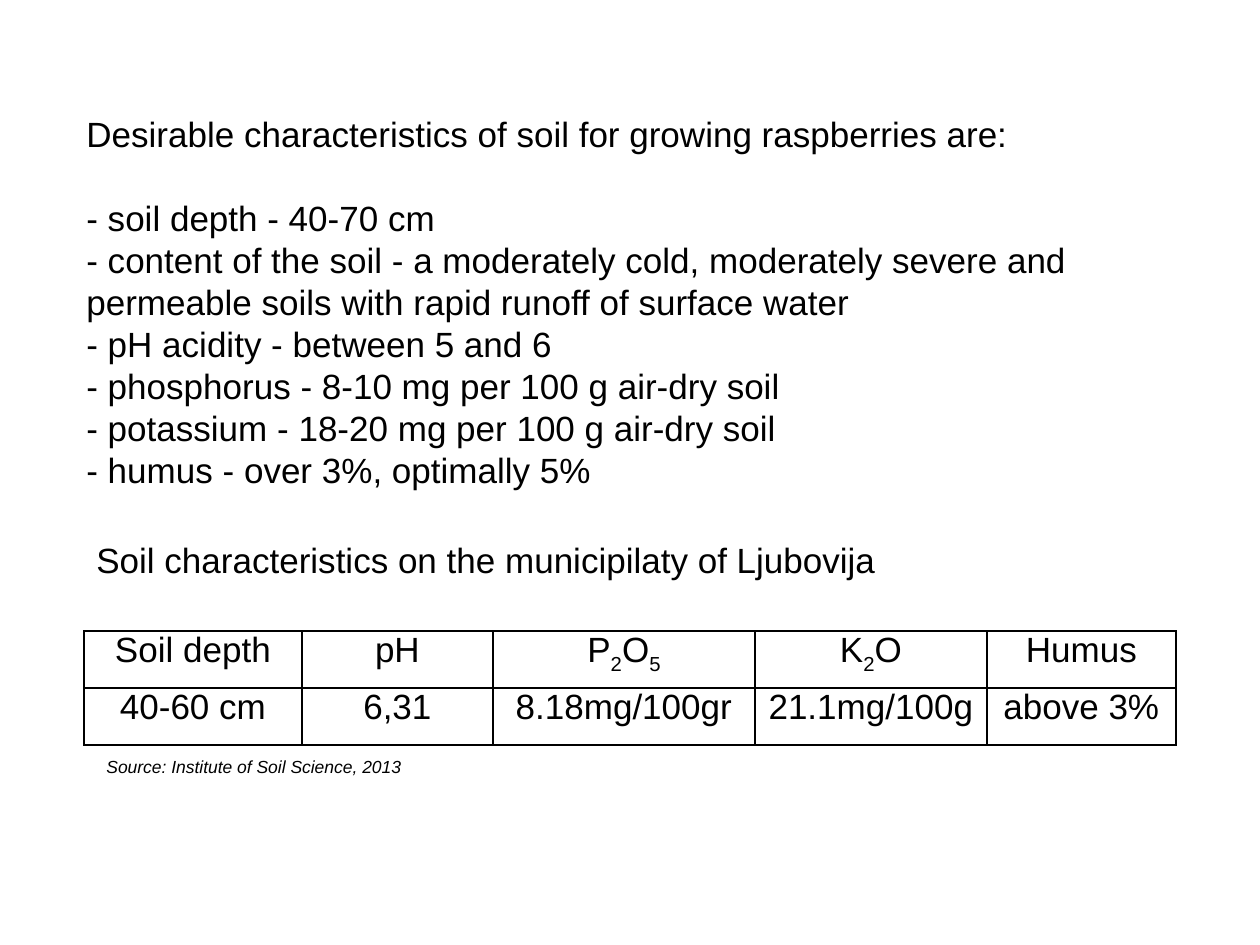
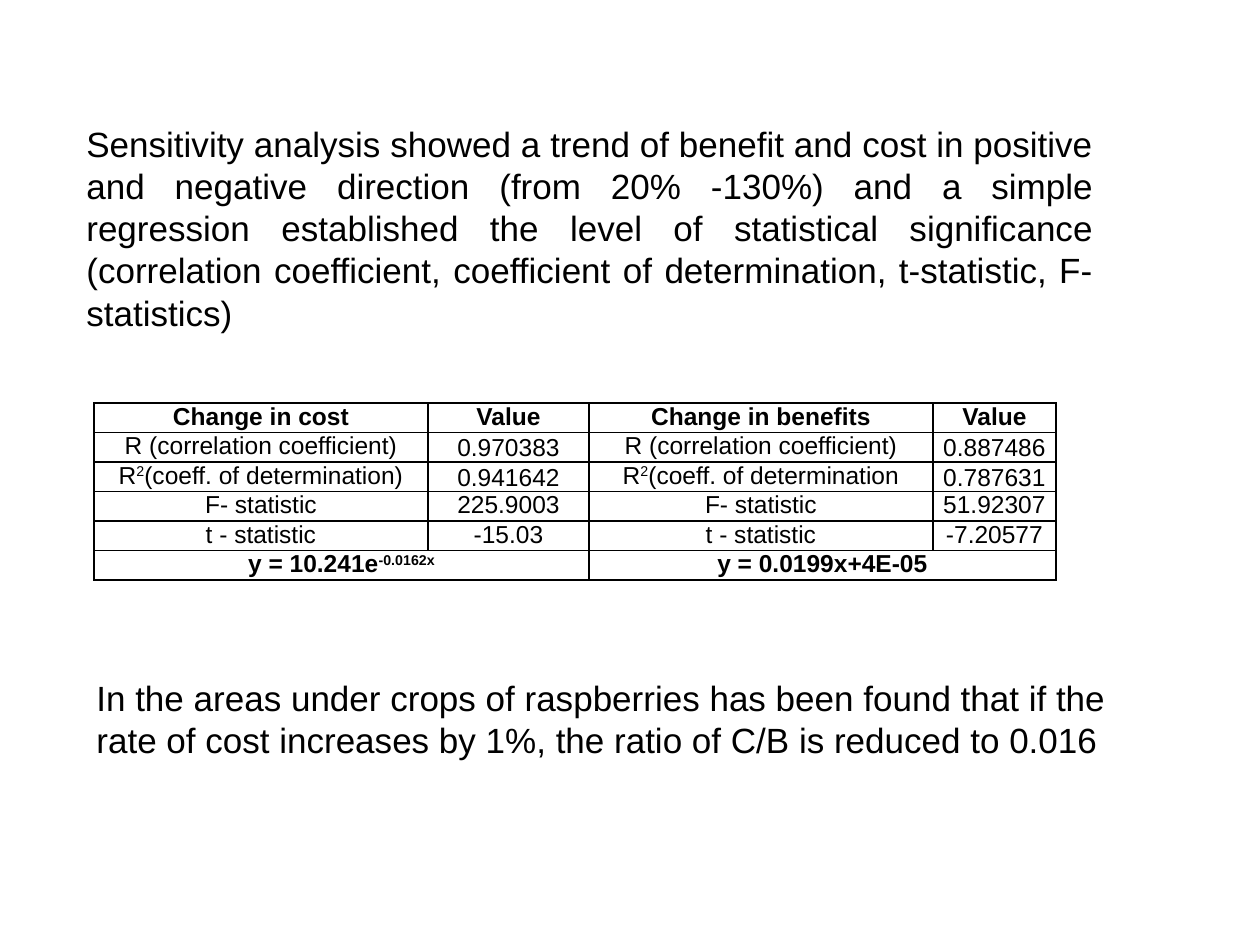
from dataclasses import dataclass

from lxml.etree import SubElement
from pptx import Presentation
from pptx.dml.color import RGBColor
from pptx.enum.text import MSO_ANCHOR, PP_ALIGN
from pptx.oxml.ns import qn
from pptx.slide import Slide
from pptx.util import Emu, Pt

# Shared look and scale
EMU_PER_PX = 914400 / 126
BLACK = RGBColor(0, 0, 0)
FONT = "Arial"
BODY_SIZE = 20
CELL_MARGIN = 9
BASELINE_MARK = "|"  # every second part of a cell text is raised or lowered


def px(n: int) -> Emu:
    return Emu(round(n * EMU_PER_PX))


@dataclass
class TextBlock:
    left: int
    top: int
    width: int
    height: int
    paragraphs: list[str]
    align: PP_ALIGN = PP_ALIGN.LEFT
    anchor: MSO_ANCHOR = MSO_ANCHOR.TOP
    size: int = BODY_SIZE
    italic: bool = False
    gap: int = 0


@dataclass
class Grid:
    left: int
    top: int
    columns: list[int]
    row_height: int
    rows: list[list[str]]
    size: int
    baseline: int
    bold_rows: tuple[int, ...] = ()
    low_cells: tuple[tuple[int, int], ...] = ()
    merges: tuple[tuple[int, int], ...] = ()


def style(p, size: int, align: PP_ALIGN, bold: bool = False, italic: bool = False) -> None:
    p.alignment = align
    p.font.name, p.font.size = FONT, Pt(size)
    p.font.bold, p.font.italic = bold, italic
    p.font.color.rgb = BLACK


def draw_text(s: Slide, block: TextBlock) -> None:
    box = s.shapes.add_textbox(px(block.left), px(block.top), px(block.width), px(block.height))
    tf = box.text_frame
    tf.word_wrap = True
    tf.vertical_anchor = block.anchor
    for i, text in enumerate(block.paragraphs):
        p = tf.paragraphs[0] if i == 0 else tf.add_paragraph()
        p.text = text
        style(p, block.size, block.align, italic=block.italic)
        if i > 0:
            p.space_before = Pt(block.gap)


def draw_borders(cell) -> None:
    tc_pr = cell._tc.get_or_add_tcPr()
    for side in ("lnL", "lnR", "lnT", "lnB"):
        ln = SubElement(tc_pr, qn(f"a:{side}"), w=str(Pt(1)))
        fill = SubElement(ln, qn("a:solidFill"))
        SubElement(fill, qn("a:srgbClr"), val=str(BLACK))


def draw_grid(s: Slide, grid: Grid) -> None:
    frame = s.shapes.add_table(
        len(grid.rows), len(grid.columns), px(grid.left), px(grid.top),
        px(sum(grid.columns)), px(grid.row_height * len(grid.rows)))
    table = frame.table
    table.first_row = table.horz_banding = False
    for column, width in zip(table.columns, grid.columns):
        column.width = px(width)
    for row in table.rows:
        row.height = px(grid.row_height)

    for i, texts in enumerate(grid.rows):
        for j, text in enumerate(texts):
            cell = table.cell(i, j)
            cell.margin_left = cell.margin_right = px(CELL_MARGIN)
            cell.margin_top = cell.margin_bottom = 0
            if (i, j) in grid.low_cells:
                cell.vertical_anchor = MSO_ANCHOR.BOTTOM
            draw_borders(cell)
            cell.fill.background()
            p = cell.text_frame.paragraphs[0]
            style(p, grid.size, PP_ALIGN.CENTER, bold=i in grid.bold_rows)
            for k, part in enumerate(text.split(BASELINE_MARK) if text else []):
                r = p.add_run()
                r.text = part
                if k % 2:
                    r._r.get_or_add_rPr().set("baseline", str(grid.baseline * 1000))

    # Each merge spans a cell and its right neighbour
    for i, j in grid.merges:
        table.cell(i, j).merge(table.cell(i, j + 1))


# Slide 1: soil characteristics
SOIL_NEEDS = [
    "- soil depth - 40-70 cm",
    "- content of the soil - a moderately cold, moderately severe and "
    "permeable soils with rapid runoff of surface water",
    "- pH acidity - between 5 and 6",
    "- phosphorus - 8-10 mg per 100 g air-dry soil",
    "- potassium - 18-20 mg per 100 g air-dry soil",
    "- humus - over 3%, optimally 5%",
]
SOIL = [
    Grid(84, 631, [218, 191, 262, 232, 189], 57, [
        ["Soil depth", "pH", "P|2|O|5", "K|2|O", "Humus"],
        ["40-60 cm", "6,31", "8.18mg/100gr", "21.1mg/100g", "above 3%"],
    ], size=BODY_SIZE, baseline=-25),
    TextBlock(84, 532, 942, 89, ["Soil characteristics on the municipilaty of Ljubovija"],
              align=PP_ALIGN.JUSTIFY),
    TextBlock(94, 750, 436, 34, ["Source: Institute of Soil Science, 2013"],
              align=PP_ALIGN.JUSTIFY, size=10, italic=True),
    TextBlock(74, 106, 1111, 394, [
        "Desirable characteristics of soil for growing raspberries are:",
        "\n".join(SOIL_NEEDS),
    ], gap=24),
]

# Slide 2: sensitivity analysis
SENSITIVITY = [
    TextBlock(74, 116, 1032, 224, [
        "Sensitivity analysis showed a trend of benefit and cost in positive and negative "
        "direction (from 20% -130%) and a simple regression established the level of "
        "statistical significance (correlation coefficient, coefficient of determination, "
        "t-statistic, F-statistics)",
    ], align=PP_ALIGN.JUSTIFY, anchor=MSO_ANCHOR.MIDDLE),
    Grid(94, 403, [334, 161, 344, 123], 29, [
        ["Change in cost", "Value", "Change in benefits", "Value"],
        ["R (correlation coefficient)", "0.970383", "R (correlation coefficient)", "0.887486"],
        ["R|2|(coeff. of determination)", "0.941642", "R|2|(coeff. of determination", "0.787631"],
        ["F- statistic", "225.9003", "F- statistic", "51.92307"],
        ["t - statistic", "-15.03", "t - statistic", "-7.20577"],
        ["y = 10.241e|-0.0162x", "", "y = 0.0199x+4E-05", ""],
    ], size=14, baseline=30, bold_rows=(0, 5),
        low_cells=((1, 1), (1, 3), (2, 1), (2, 3)), merges=((5, 0), (5, 2))),
    TextBlock(84, 670, 1062, 97, [
        "In the areas under crops of raspberries has been found that if the rate of cost "
        "increases by 1%, the ratio of C/B is reduced to 0.016",
    ]),
]


def main() -> None:
    prs = Presentation()
    prs.slide_width, prs.slide_height = px(1260), px(945)
    for parts in (SOIL, SENSITIVITY):
        s = prs.slides.add_slide(prs.slide_layouts[6])
        for part in parts:
            if isinstance(part, Grid):
                draw_grid(s, part)
            else:
                draw_text(s, part)
    prs.save("out.pptx")


if __name__ == "__main__":
    main()
